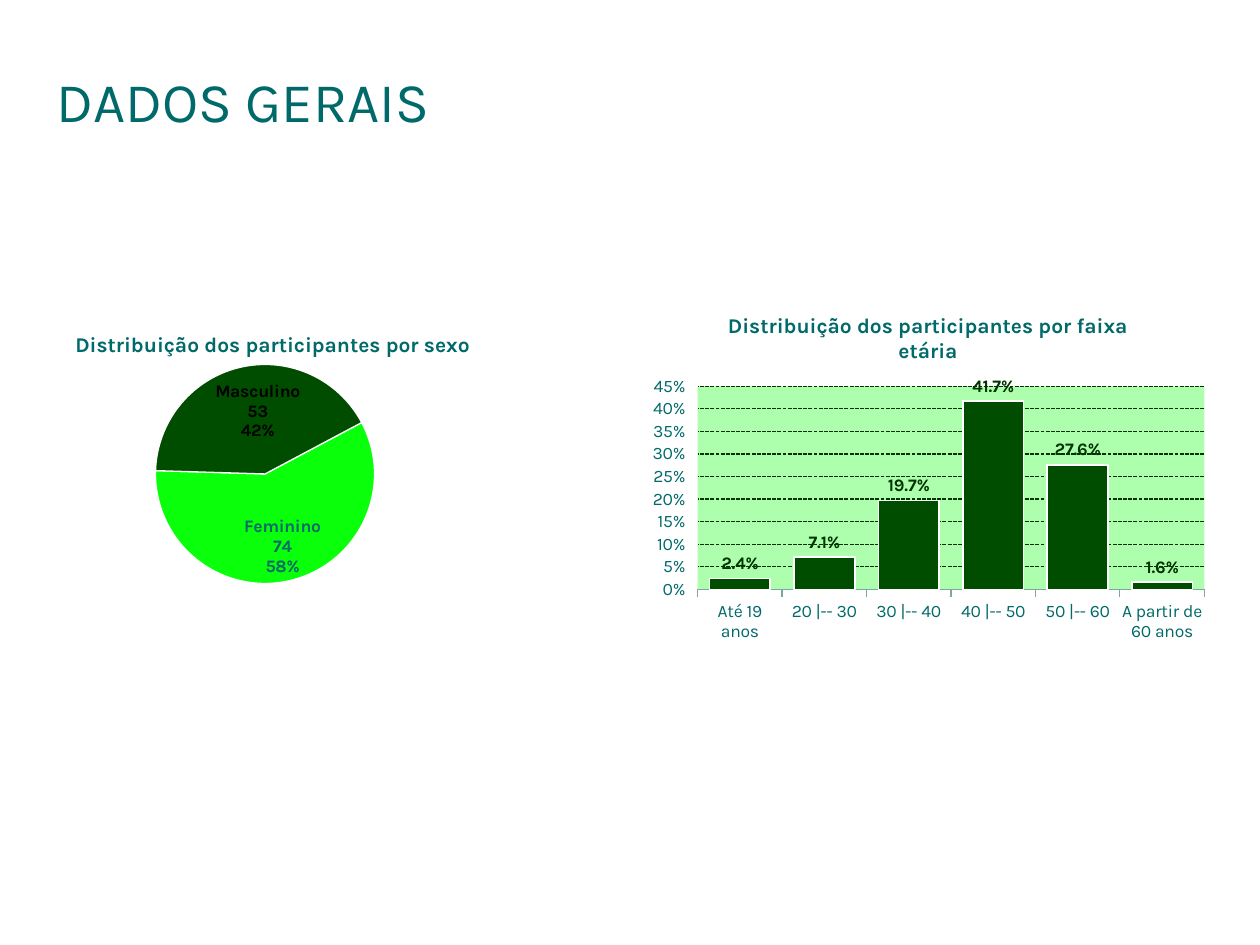
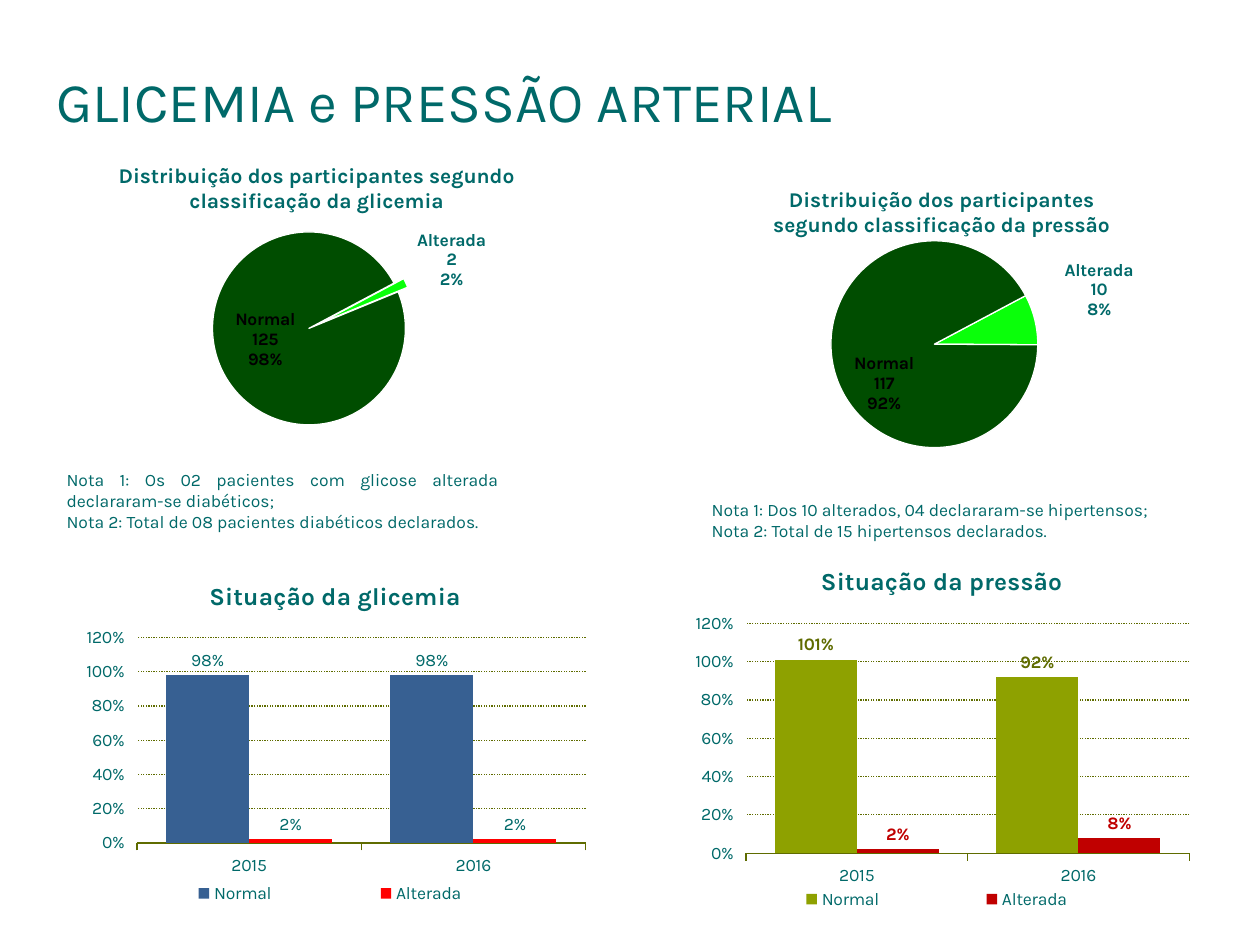
from dataclasses import dataclass
from typing import Optional

from lxml.etree import SubElement
from pptx import Presentation
from pptx.chart.data import CategoryChartData
from pptx.dml.color import RGBColor
from pptx.enum.chart import XL_CHART_TYPE as ChartType, XL_LABEL_POSITION as LabelPos
from pptx.enum.chart import XL_LEGEND_POSITION as LegendPos, XL_TICK_MARK as Tick
from pptx.enum.dml import MSO_LINE as Dash
from pptx.enum.text import MSO_ANCHOR as Anchor, PP_ALIGN as Align
from pptx.oxml.ns import qn
from pptx.util import Emu, Pt

PX = 9144
FONT = "Karla"
TEAL = "006969"
DARK = "004D00"
LIME = "0AFF0A"
FOREST = "003300"
OLIVE = "5F6C00"
WHITE = "FFFFFF"
BLACK = "000000"
RED = "C00000"

Box = tuple[int, int, int, int]
Layout = tuple[float, ...]
LEGEND: Layout = (0.04, 0.88, 0.9, 0.08)


@dataclass(frozen=True)
class Slice:
    name: str
    count: int
    fill: str
    ink: str
    shift: tuple[float, float]
    explosion: int = 0


@dataclass(frozen=True)
class Pie:
    title: str
    box: Box
    plot: Layout
    slices: tuple[Slice, ...]


@dataclass(frozen=True)
class Bars:
    name: str
    values: tuple[float, ...]
    fill: str
    ink: str
    bold: bool = True


@dataclass(frozen=True)
class Columns:
    title: str
    box: Box
    plot: Layout
    cats: tuple[str, ...]
    series: tuple[Bars, ...]
    title_size: int = 14
    gap: int = 70
    top: float = 1.2
    step: float = 0.2
    label_format: str = "0%"
    axis: str = OLIVE
    grid: str = OLIVE
    dash: Dash = Dash.ROUND_DOT
    border: Optional[str] = None
    back: Optional[str] = None
    legend: bool = True


@dataclass(frozen=True)
class Note:
    box: Box
    lines: tuple[str, ...]


@dataclass(frozen=True)
class Page:
    title: str
    items: tuple


def rgb(value: str) -> RGBColor:
    return RGBColor.from_string(value)


def px(box: Box) -> list[Emu]:
    return [Emu(v * PX) for v in box]


def style(font, size: int, ink: str = TEAL, bold: bool = False) -> None:
    font.name, font.size, font.bold = FONT, Pt(size), bold
    font.color.rgb = rgb(ink)


def paint(target, color: str) -> None:
    target.fill.solid()
    target.fill.fore_color.rgb = rgb(color)


def add_text(slide, box: Box, lines, size: int, align: Align, anchor: Anchor) -> None:
    tf = slide.shapes.add_textbox(*px(box)).text_frame
    tf.word_wrap = True
    tf.vertical_anchor = anchor
    for i, line in enumerate(lines):
        p = tf.paragraphs[0] if i == 0 else tf.add_paragraph()
        p.alignment = align
        r = p.add_run()
        r.text = line
        style(r.font, size)


def add_note(slide, note: Note) -> None:
    add_text(slide, note.box, note.lines, 10, Align.JUSTIFY, Anchor.TOP)


def set_layout(parent, index: int, names: str, values: Layout,
               edge: bool = False, inner: bool = False) -> None:
    for old in parent.findall(qn("c:layout")):
        parent.remove(old)
    layout = parent.makeelement(qn("c:layout"))
    manual = SubElement(layout, qn("c:manualLayout"))
    if inner:
        SubElement(manual, qn("c:layoutTarget"), val="inner")
    if edge:
        for name in ("xMode", "yMode"):
            SubElement(manual, qn(f"c:{name}"), val="edge")
    for name, value in zip(names, values):
        SubElement(manual, qn(f"c:{name}"), val=str(value))
    parent.insert(index, layout)


def add_chart(slide, kind: ChartType, item, size: int, cats, series):
    data = CategoryChartData()
    data.categories = cats
    for name, values in series:
        data.add_series(name, values)
    chart = slide.shapes.add_chart(kind, *px(item.box), data).chart
    style(chart.font, 10)
    chart.has_legend = False
    chart.has_title = True
    r = chart.chart_title.text_frame.paragraphs[0].add_run()
    r.text = item.title
    style(r.font, size, bold=True)
    area = next(chart.element.iter(qn("c:plotArea")))
    set_layout(area, 0, "xywh", item.plot, edge=True, inner=True)
    return chart, area


def add_pie(slide, pie: Pie) -> None:
    chart, area = add_chart(
        slide, ChartType.PIE, pie, 12, [s.name for s in pie.slices],
        [("Participantes", [s.count for s in pie.slices])])
    plot = chart.plots[0]
    plot.vary_by_categories = False
    pie_xml = area.find(qn("c:pieChart"))
    angle = pie_xml.find(qn("c:firstSliceAng"))
    if angle is None:
        angle = SubElement(pie_xml, qn("c:firstSliceAng"))
    angle.set("val", "62")
    points = plot.series[0].points
    for i, part in enumerate(pie.slices):
        fmt = points[i].format
        paint(fmt, part.fill)
        fmt.line.color.rgb = rgb(WHITE)
        fmt.line.width = Pt(0.75)
        label = points[i].data_label
        style(label.font, 10, part.ink, True)
        label.position = LabelPos.CENTER
    for part, dpt in zip(pie.slices, area.iter(qn("c:dPt"))):
        if part.explosion:
            burst = dpt.makeelement(qn("c:explosion"), val=str(part.explosion))
            dpt.find(qn("c:spPr")).addprevious(burst)
    for part, label in zip(pie.slices, area.iter(qn("c:dLbl"))):
        set_layout(label, 1, "xy", part.shift)
        next(label.iter(qn("a:bodyPr"))).set("wrap", "none")
        for name in ("showVal", "showCatName", "showPercent"):
            label.find(qn(f"c:{name}")).set("val", "1")
        SubElement(label, qn("c:separator")).text = "\n"
    for leader in area.iter(qn("c:showLeaderLines")):
        leader.set("val", "0")


def add_columns(slide, col: Columns) -> None:
    chart, area = add_chart(
        slide, ChartType.COLUMN_CLUSTERED, col, col.title_size, col.cats,
        [(s.name, s.values) for s in col.series])
    if col.back:
        sp = SubElement(area, qn("c:spPr"))
        fill = SubElement(sp, qn("a:solidFill"))
        SubElement(fill, qn("a:srgbClr"), val=col.back)
    plot = chart.plots[0]
    plot.vary_by_categories = False
    plot.gap_width = col.gap
    plot.overlap = 0
    for bars, s in zip(col.series, plot.series):
        s.invert_if_negative = False
        paint(s.format, bars.fill)
        if col.border:
            s.format.line.color.rgb = rgb(col.border)
            s.format.line.width = Pt(1)
        labels = s.data_labels
        labels.show_value = True
        labels.number_format = col.label_format
        labels.number_format_is_linked = False
        labels.position = LabelPos.OUTSIDE_END
        style(labels.font, 10, bars.ink, bars.bold)
    cat, val = chart.category_axis, chart.value_axis
    cat.major_tick_mark = val.major_tick_mark = Tick.OUTSIDE
    cat.format.line.color.rgb = rgb(col.axis)
    cat.format.line.width = Pt(0.75)
    val.format.line.fill.background()
    val.minimum_scale, val.maximum_scale, val.major_unit = 0, col.top, col.step
    val.tick_labels.number_format = "0%"
    val.tick_labels.number_format_is_linked = False
    grid = val.major_gridlines.format.line
    grid.color.rgb = rgb(col.grid)
    grid.width = Pt(0.75)
    grid.dash_style = col.dash
    for axis in (cat, val):
        style(axis.tick_labels.font, 10)
    if col.legend:
        chart.has_legend = True
        chart.legend.position = LegendPos.BOTTOM
        chart.legend.include_in_layout = False
        style(chart.legend.font, 10)
        set_layout(next(chart.element.iter(qn("c:legend"))), 1, "xywh", LEGEND, edge=True)


PAGES = (
    Page("DADOS GERAIS", (
        Pie("Distribuição dos participantes por sexo", (12, 249, 409, 252),
            (0.24, 0.16, 0.49, 0.69), (
                Slice("Feminino", 74, LIME, TEAL, (0.01, 0.06)),
                Slice("Masculino", 53, DARK, BLACK, (0.01, -0.03)))),
        Columns("Distribuição dos participantes por faixa etária",
                (508, 233, 457, 283), (0.1, 0.26, 0.88, 0.57),
                ("Até 19 anos", "20 |-- 30", "30 |-- 40", "40 |-- 50",
                 "50 |-- 60", "A partir de 60 anos"),
                (Bars("Participantes", (0.024, 0.071, 0.197, 0.417, 0.276, 0.016),
                      DARK, FOREST),),
                title_size=12, gap=39, top=0.45, step=0.05, label_format="0.0%",
                axis="80A5A5", grid=FOREST, dash=Dash.SQUARE_DOT, border=WHITE,
                back="ADFFAD", legend=False))),
    Page("GLICEMIA e PRESSÃO ARTERIAL", (
        Note((43, 367, 362, 61), (
            "Nota 1: Os 02 pacientes com glicose alterada declararam-se diabéticos;",
            "Nota 2: Total de 08 pacientes diabéticos declarados.")),
        Note((555, 391, 386, 44), (
            "Nota 1: Dos 10 alterados, 04 declararam-se hipertensos;",
            "Nota 2: Total de 15 hipertensos declarados.")),
        Pie("Distribuição dos participantes segundo classificação da glicemia",
            (43, 115, 417, 247), (0.24, 0.28, 0.49, 0.62), (
                Slice("Alterada", 2, LIME, TEAL, (0.17, -0.14), 11),
                Slice("Normal", 125, DARK, BLACK, (0, -0.03)))),
        Pie("Distribuição dos participantes segundo classificação da pressão",
            (550, 134, 395, 238), (0.24, 0.24, 0.49, 0.69), (
                Slice("Alterada", 10, LIME, TEAL, (0.23, -0.14)),
                Slice("Normal", 117, DARK, BLACK, (0, 0.09)))),
        Columns("Situação da pressão", (543, 434, 409, 304),
                (0.12, 0.2, 0.86, 0.6), ("2015", "2016"), (
                    Bars("Normal", (1.01, 0.92), "8EA100", OLIVE),
                    Bars("Alterada", (0.02, 0.08), RED, RED))),
        Columns("Situação da glicemia", (59, 446, 414, 286),
                (0.12, 0.21, 0.86, 0.57), ("2015", "2016"), (
                    Bars("Normal", (0.98, 0.98), "376092", TEAL, False),
                    Bars("Alterada", (0.02, 0.02), "FF0000", TEAL, False))))),
)
DRAW = {Pie: add_pie, Columns: add_columns, Note: add_note}


def main() -> None:
    prs = Presentation()
    prs.slide_width, prs.slide_height = Emu(1000 * PX), Emu(750 * PX)
    for page in PAGES:
        slide = prs.slides.add_slide(prs.slide_layouts[6])
        add_text(slide, (35, 44, 827, 71), (page.title,), 32, Align.LEFT, Anchor.MIDDLE)
        for item in page.items:
            DRAW[type(item)](slide, item)
    prs.save("out.pptx")


if __name__ == "__main__":
    main()
